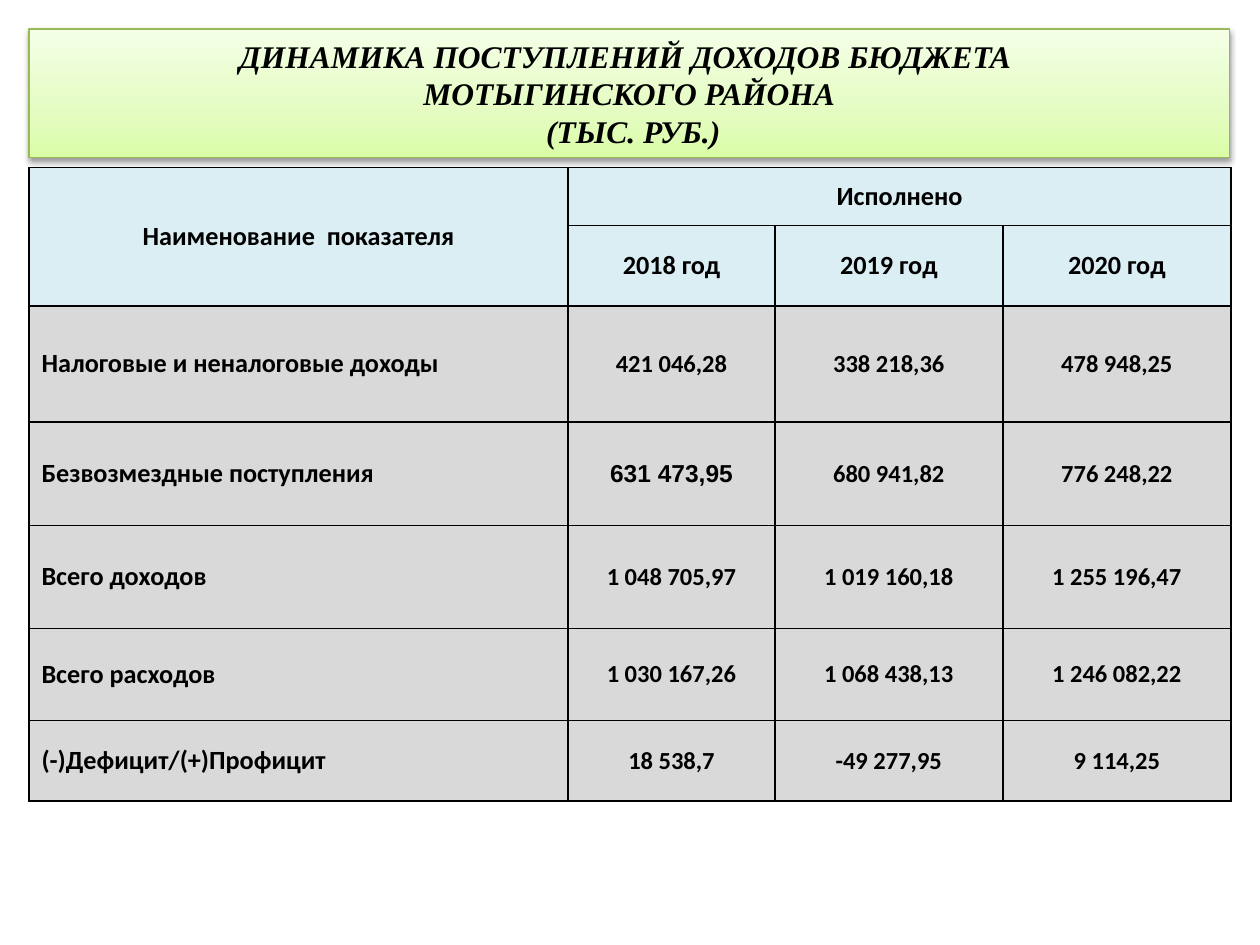
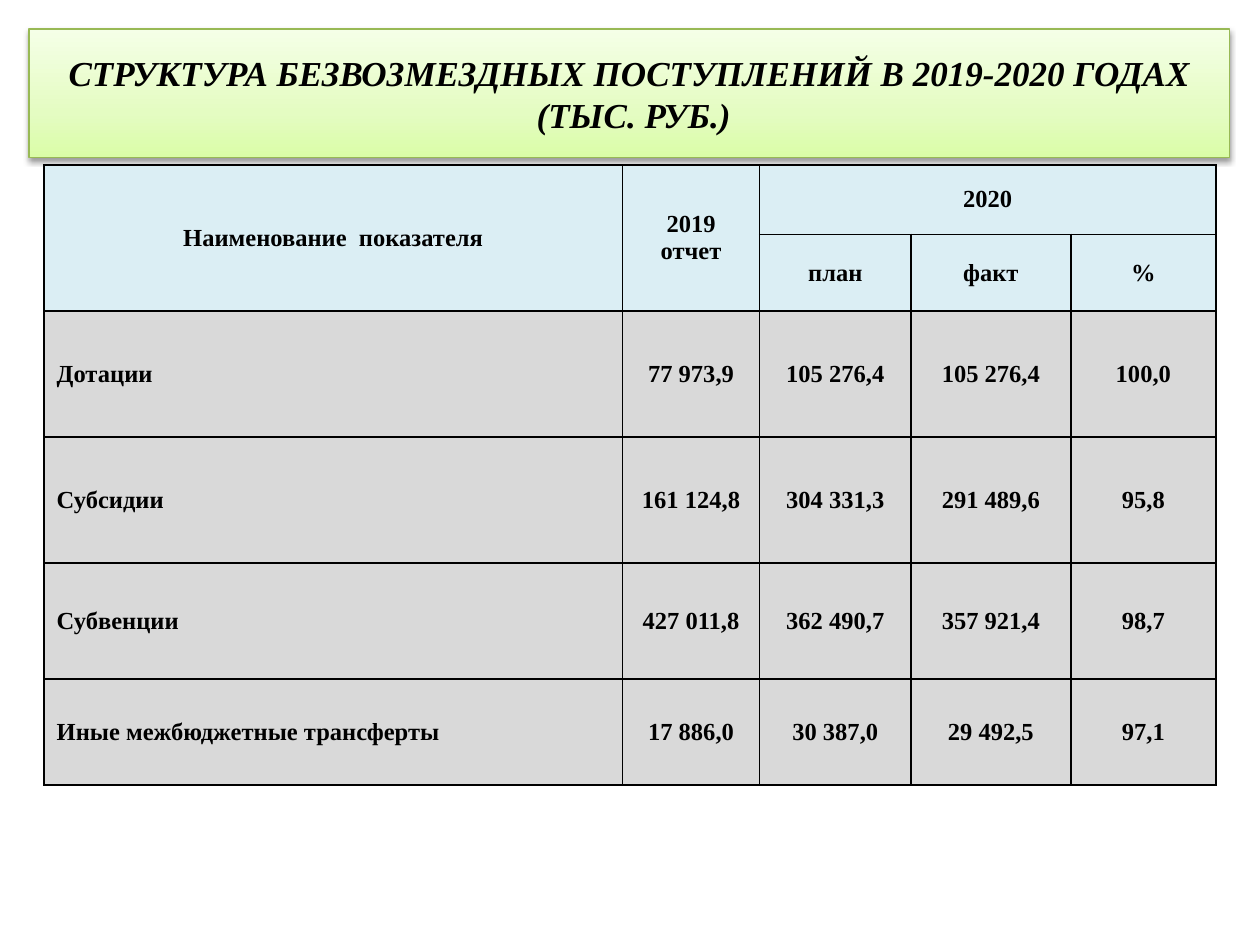
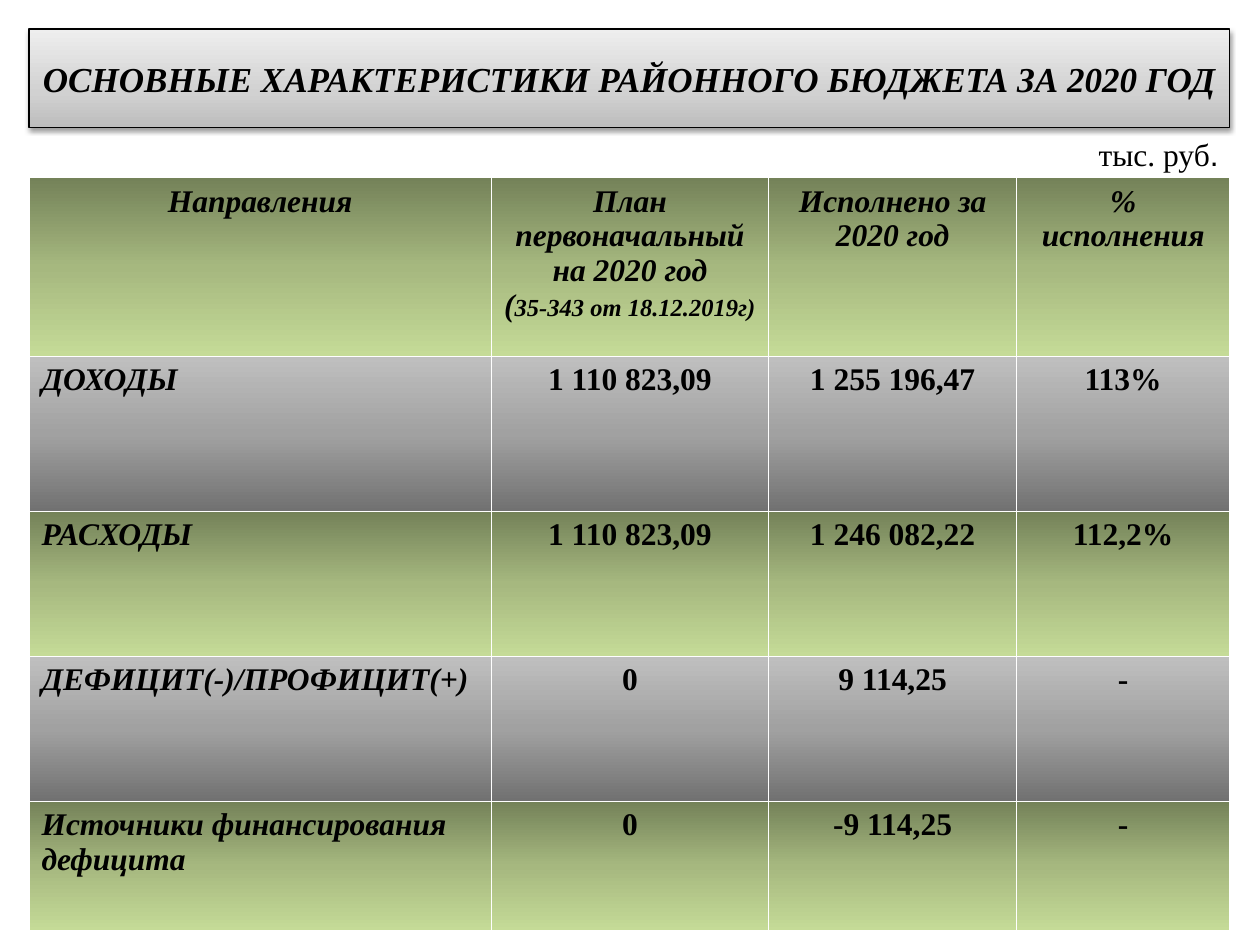
from dataclasses import dataclass
from itertools import cycle, islice

from lxml.etree import SubElement
from pptx import Presentation
from pptx.dml.color import RGBColor
from pptx.enum.text import MSO_ANCHOR, MSO_AUTO_SIZE, PP_ALIGN
from pptx.oxml.ns import qn
from pptx.slide import Slide
from pptx.table import Table, _Cell
from pptx.text.text import Font
from pptx.util import Inches, Pt

LEFT, CENTER, RIGHT = PP_ALIGN.LEFT, PP_ALIGN.CENTER, PP_ALIGN.RIGHT
TOP, MIDDLE = MSO_ANCHOR.TOP, MSO_ANCHOR.MIDDLE
NO_AUTOFIT = MSO_AUTO_SIZE.NONE
TITLE_ONLY = 5


@dataclass(frozen=True)
class Gradient:
    stops: tuple[tuple[int, str], ...]
    angle: int  # degrees clockwise


@dataclass(frozen=True)
class Theme:
    serif: str = "Times New Roman"
    sans: str = "Calibri"
    plain: str = "Arial"
    ink: str = "000000"
    white: str = "FFFFFF"
    header: str = "DBEEF4"
    body: str = "D9D9D9"
    lime_line: str = "98B955"
    lime: Gradient = Gradient(((0, "DAFDA7"), (35, "E4FCC2"), (100, "F5FFE7")), 270)
    silver: Gradient = Gradient(((0, "BDBDBD"), (35, "D1D1D1"), (100, "EEEEEE")), 270)
    olive: Gradient = Gradient(((0, "748259"), (50, "A6B87F"), (100, "C5DB97")), 90)
    gray: Gradient = Gradient(((0, "717171"), (50, "A1A1A1"), (100, "BFBFBF")), 270)
    large: int = 20
    medium: int = 18
    label: int = 15
    small: int = 14
    margin: float = 0.23
    content_width: float = 9.53


THEME = Theme()


@dataclass(frozen=True)
class Banner:
    lines: tuple[str, ...]
    size: int
    height: float = 1.02
    fill: Gradient = THEME.lime
    line: str = THEME.lime_line


@dataclass(frozen=True)
class BudgetTable:
    left: float
    top: float
    columns: tuple[float, ...]
    heights: tuple[float, ...]
    rows: tuple[tuple[str, ...], ...]
    fills: tuple[str | Gradient, ...]
    font: str
    label_size: int
    value_size: int
    header_rows: int = 2
    merges: tuple[tuple[int, int, int, int], ...] = ()
    border: str = THEME.ink
    anchor: MSO_ANCHOR = MIDDLE
    italic_labels: bool = False


def style_font(font: Font, name: str, size: int, bold: bool = True, italic: bool = False) -> None:
    font.name, font.size, font.bold, font.italic = name, Pt(size), bold, italic
    font.color.rgb = RGBColor.from_string(THEME.ink)


def apply_gradient(fill, properties, gradient: Gradient) -> None:
    """Give the fill, held by the properties element, any number of stops."""
    fill.gradient()
    fill.gradient_angle = (360 - gradient.angle) % 360
    stop_list = properties.find(qn("a:gradFill")).find(qn("a:gsLst"))
    for old_stop in list(stop_list):
        stop_list.remove(old_stop)
    for position, color in gradient.stops:
        stop = SubElement(stop_list, qn("a:gs"), pos=str(position * 1000))
        SubElement(stop, qn("a:srgbClr"), val=color)


def add_shadow(shape) -> None:
    shape.shadow.inherit = False
    effects = shape._element.spPr.find(qn("a:effectLst"))
    shadow = SubElement(effects, qn("a:outerShdw"), blurRad=str(Pt(3.1)), dist=str(Pt(1.6)),
                        dir="5400000", rotWithShape="0")
    color = SubElement(shadow, qn("a:srgbClr"), val=THEME.ink)
    SubElement(color, qn("a:alpha"), val="38000")


def draw_banner(slide: Slide, banner: Banner) -> None:
    title = slide.shapes.title
    title.left = title.top = Inches(THEME.margin)
    title.width, title.height = Inches(THEME.content_width), Inches(banner.height)
    apply_gradient(title.fill, title._element.spPr, banner.fill)
    title.line.color.rgb = RGBColor.from_string(banner.line)
    title.line.width = Pt(0.75)
    add_shadow(title)

    frame = title.text_frame
    frame.auto_size, frame.vertical_anchor = NO_AUTOFIT, MIDDLE
    paragraph = frame.paragraphs[0]
    paragraph.alignment = CENTER
    style_font(paragraph.font, THEME.serif, banner.size, italic=True)
    for index, line in enumerate(banner.lines):
        if index:
            paragraph.add_line_break()
        paragraph.add_run().text = line


def add_borders(cell: _Cell, color: str) -> None:
    properties = cell._tc.get_or_add_tcPr()
    for index, side in enumerate(("lnL", "lnR", "lnT", "lnB")):
        border = SubElement(properties, qn(f"a:{side}"), w=str(Pt(1)))
        SubElement(SubElement(border, qn("a:solidFill")), qn("a:srgbClr"), val=color)
        properties.insert(index, border)


def fill_cell(cell: _Cell, fill: str | Gradient) -> None:
    if isinstance(fill, Gradient):
        apply_gradient(cell.fill, cell._tc.get_or_add_tcPr(), fill)
    else:
        cell.fill.solid()
        cell.fill.fore_color.rgb = RGBColor.from_string(fill)


def draw_table(slide: Slide, spec: BudgetTable) -> Table:
    table = slide.shapes.add_table(
        len(spec.rows), len(spec.columns), Inches(spec.left), Inches(spec.top),
        Inches(sum(spec.columns)), Inches(sum(spec.heights))).table
    table.first_row = table.horz_banding = False
    for column, width in zip(table.columns, spec.columns):
        column.width = Inches(width)
    for row, height in zip(table.rows, spec.heights):
        row.height = Inches(height)

    for r, (texts, fill) in enumerate(zip(spec.rows, spec.fills)):
        for c, text in enumerate(texts):
            cell = table.cell(r, c)
            cell.text = text
            cell.vertical_anchor = spec.anchor
            fill_cell(cell, fill)
            add_borders(cell, spec.border)
            is_header = r < spec.header_rows
            is_label = is_header or c == 0
            for paragraph in cell.text_frame.paragraphs:
                paragraph.alignment = CENTER if is_header or c else LEFT
                style_font(paragraph.font, spec.font,
                           spec.label_size if is_label else spec.value_size,
                           italic=is_label and spec.italic_labels)
    for top, left, bottom, right in spec.merges:
        table.cell(top, left).merge(table.cell(bottom, right))
    return table


def draw_unit_note(slide: Slide) -> None:
    note = slide.shapes.add_textbox(Inches(8.44), Inches(1.02), Inches(1.33), Inches(0.4))
    note.text_frame.word_wrap = True
    paragraph = note.text_frame.paragraphs[0]
    paragraph.alignment = RIGHT
    for text, font in (("тыс. руб", THEME.serif), (".", THEME.plain)):
        run = paragraph.add_run()
        run.text = text
        style_font(run.font, font, THEME.medium, bold=False)


INCOME_BANNER = Banner(
    ("ДИНАМИКА ПОСТУПЛЕНИЙ ДОХОДОВ БЮДЖЕТА ", "МОТЫГИНСКОГО РАЙОНА", " (ТЫС. РУБ.)"),
    THEME.medium)
INCOME_TABLE = BudgetTable(
    left=THEME.margin, top=1.33,
    columns=(4.28, 1.64, 1.81, 1.81),
    heights=(0.46, 0.64, 0.92, 0.82, 0.82, 0.73, 0.64),
    rows=(
        ("Наименование  показателя", "Исполнено", "", ""),
        ("", "2018 год", "2019 год", "2020 год"),
        ("Налоговые и неналоговые доходы", "421 046,28", "338 218,36", "478 948,25"),
        ("Безвозмездные поступления", "631 473,95", "680 941,82", "776 248,22"),
        ("Всего доходов", "1 048 705,97", "1 019 160,18", "1 255 196,47"),
        ("Всего расходов", "1 030 167,26", "1 068 438,13", "1 246 082,22"),
        ("(-)Дефицит/(+)Профицит", "18 538,7", "-49 277,95", "9 114,25"),
    ),
    fills=(THEME.header,) * 2 + (THEME.body,) * 5,
    font=THEME.sans, label_size=THEME.label, value_size=THEME.small,
    merges=((0, 0, 1, 0), (0, 1, 0, 3)))

TRANSFERS_BANNER = Banner(
    ("СТРУКТУРА БЕЗВОЗМЕЗДНЫХ ПОСТУПЛЕНИЙ В 2019-2020 ГОДАХ", " (ТЫС. РУБ.)"), THEME.large)
TRANSFERS_TABLE = BudgetTable(
    left=0.35, top=1.31,
    columns=(4.59, 1.09, 1.2, 1.27, 1.15),
    heights=(0.55, 0.61, 1, 1, 0.92, 0.84),
    rows=(
        ("Наименование  показателя", "2019\nотчет", "2020", "", ""),
        ("", "", "план", "факт", "%"),
        ("Дотации", "77 973,9", "105 276,4", "105 276,4", "100,0"),
        ("Субсидии", "161 124,8", "304 331,3", "291 489,6", "95,8"),
        ("Субвенции", "427 011,8", "362 490,7", "357 921,4", "98,7"),
        ("Иные межбюджетные трансферты", "17 886,0", "30 387,0", "29 492,5", "97,1"),
    ),
    fills=(THEME.header,) * 2 + (THEME.body,) * 4,
    font=THEME.serif, label_size=THEME.small, value_size=THEME.small,
    merges=((0, 0, 1, 0), (0, 1, 1, 1), (0, 2, 0, 4)))

SUMMARY_BANNER = Banner(
    ("ОСНОВНЫЕ ХАРАКТЕРИСТИКИ РАЙОННОГО БЮДЖЕТА ЗА 2020 ГОД",), THEME.large,
    height=0.78, fill=THEME.silver, line=THEME.ink)
SUMMARY_TABLE = BudgetTable(
    left=THEME.margin, top=1.41,
    columns=(3.67, 2.2, 1.97, 1.69),
    heights=(1.42, 1.23, 1.15, 1.15, 1.03),
    rows=(
        ("Направления", "План первоначальный на 2020 год", "Исполнено за 2020 год",
         "% исполнения"),
        ("ДОХОДЫ", "1 110 823,09", "1 255 196,47", "113%"),
        ("РАСХОДЫ", "1 110 823,09", "1 246 082,22", "112,2%"),
        ("ДЕФИЦИТ(-)/ПРОФИЦИТ(+)", "0", "9 114,25", "-"),
        ("Источники финансирования дефицита", "0", "-9 114,25", "-"),
    ),
    fills=tuple(islice(cycle((THEME.olive, THEME.gray)), 5)),
    font=THEME.serif, label_size=THEME.medium, value_size=THEME.medium,
    header_rows=1, border=THEME.white, anchor=TOP, italic_labels=True)


def add_decision_reference(table: Table) -> None:
    """Put the number and date of the budget decision under the plan heading."""
    heading = table.cell(0, 1).text_frame.paragraphs[0]
    heading.add_line_break()
    heading.add_run().text = "("
    reference = heading.add_run()
    reference.text = "35-343 от 18.12.2019г)"
    reference.font.size = Pt(THEME.small)


def main() -> None:
    deck = Presentation()
    deck.slide_width, deck.slide_height = Inches(10), Inches(7.5)
    tables = []
    for banner, spec in ((INCOME_BANNER, INCOME_TABLE),
                         (TRANSFERS_BANNER, TRANSFERS_TABLE),
                         (SUMMARY_BANNER, SUMMARY_TABLE)):
        slide = deck.slides.add_slide(deck.slide_layouts[TITLE_ONLY])
        draw_banner(slide, banner)
        tables.append(draw_table(slide, spec))

    income, _, summary = tables
    income.cell(3, 1).text_frame.paragraphs[0].font.name = THEME.plain
    add_decision_reference(summary)
    draw_unit_note(slide)
    deck.save("out.pptx")


if __name__ == "__main__":
    main()
